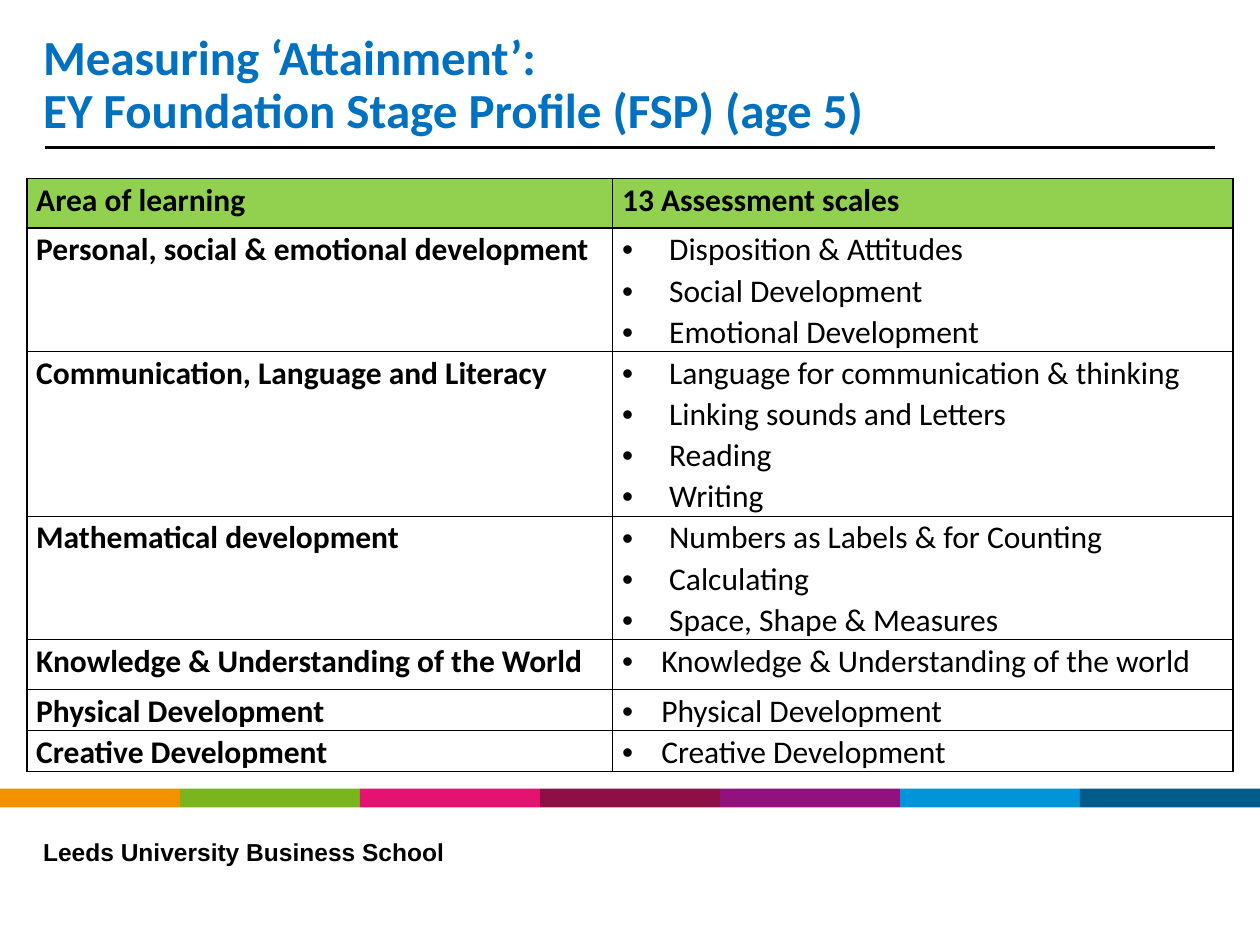
"""Build the slide on the Early Years Foundation Stage Profile scales."""
from dataclasses import dataclass
from typing import Any

from lxml.etree import SubElement
from pptx import Presentation
from pptx.dml.color import RGBColor
from pptx.enum.shapes import MSO_CONNECTOR, MSO_SHAPE
from pptx.enum.text import MSO_ANCHOR, MSO_AUTO_SIZE, PP_ALIGN
from pptx.oxml.ns import qn
from pptx.util import Cm, Pt

STRAIGHT = MSO_CONNECTOR.STRAIGHT
RECTANGLE = MSO_SHAPE.RECTANGLE
BOTTOM, TOP = MSO_ANCHOR.BOTTOM, MSO_ANCHOR.TOP
NO_FIT = MSO_AUTO_SIZE.NONE
LEFT = PP_ALIGN.LEFT
TITLE_ONLY = 5


@dataclass(frozen=True)
class Theme:
    """Hold the colours, fonts and type sizes of the deck."""

    title: str = "0070C0"
    ink: str = "000000"
    header: str = "92D050"
    stripes: tuple[str, ...] = (
        "F39100", "7AB51D", "E41270", "8E0E46", "93117E", "0095D8", "005C88")
    body_font: str = "Calibri"
    footer_font: str = "Arial"
    title_size: int = 28
    body_size: int = 18
    footer_size: int = 14


@dataclass(frozen=True)
class TextStyle:
    """Describe how a paragraph looks."""

    font: str
    size: int
    color: str
    spacing: float
    bold: bool = True


@dataclass(frozen=True)
class Area:
    """Describe one area of learning and its assessment scales."""

    name: str
    scales: tuple[str, ...]
    height: float
    indent: float = 0.95


THEME = Theme()
TITLE_STYLE = TextStyle(THEME.body_font, THEME.title_size, THEME.title, 0.9)
FOOTER_STYLE = TextStyle(THEME.footer_font, THEME.footer_size, THEME.ink, 0.8)
LABEL_STYLE = TextStyle(THEME.body_font, THEME.body_size, THEME.ink, 1.07)
SCALE_STYLE = TextStyle(THEME.body_font, THEME.body_size, THEME.ink, 1.07, False)

HEADINGS = ("Area of learning", "13 Assessment scales")
HEADER_HEIGHT = 1.0
COLUMN_WIDTHS = (11.81, 12.51)
AREAS = (
    Area("Personal, social & emotional development",
         ("Disposition & Attitudes", "Social Development", "Emotional Development"), 2.48),
    Area("Communication, Language and Literacy",
         ("Language for communication & thinking", "Linking sounds and Letters",
          "Reading", "Writing"), 3.32),
    Area("Mathematical development",
         ("Numbers as Labels & for Counting", "Calculating", "Space, Shape & Measures"), 2.48),
    Area("Knowledge & Understanding of the World",
         ("Knowledge & Understanding of the world",), 1.0, 0.79),
    Area("Physical Development", ("Physical Development",), 0.83, 0.79),
    Area("Creative Development", ("Creative Development",), 0.83, 0.79),
)


def apply(target: Any, values: dict[str, Any]) -> None:
    """Set each named attribute on the target."""
    for name, value in values.items():
        setattr(target, name, value)


def write(para: Any, text: str, style: TextStyle) -> None:
    """Put styled text in a paragraph."""
    para.text = text
    apply(para, {"alignment": LEFT, "line_spacing": style.spacing,
                 "space_before": Pt(0), "space_after": Pt(0)})
    for span in para.runs:
        apply(span.font, {"name": style.font, "size": Pt(style.size), "bold": style.bold})
        span.font.color.rgb = RGBColor.from_string(style.color)


def add_bullet(para: Any, indent: float) -> None:
    """Give a paragraph a round bullet with a hanging indent."""
    properties = para._p.get_or_add_pPr()
    properties.set("marL", str(Cm(indent)))
    properties.set("indent", str(-Cm(indent)))
    SubElement(properties, qn("a:buFont"), typeface="Arial")
    SubElement(properties, qn("a:buChar"), char="•")


def fill_frame(box: Any, text: str, style: TextStyle, anchor: Any) -> None:
    """Write one paragraph in a box without margins."""
    frame = box.text_frame
    apply(frame, {"margin_left": 0, "margin_right": 0, "margin_top": 0, "margin_bottom": 0,
                  "word_wrap": True, "auto_size": NO_FIT, "vertical_anchor": anchor})
    write(frame.paragraphs[0], text, style)


def add_title(page: Any) -> None:
    """Place and write the title."""
    title = page.shapes.title
    apply(title, {"left": Cm(0.87), "top": Cm(0.61), "width": Cm(17.93), "height": Cm(2.2)})
    fill_frame(title, "Measuring ‘Attainment’:\vEY Foundation Stage Profile (FSP) (age 5)",
               TITLE_STYLE, BOTTOM)


def add_rule(page: Any) -> None:
    """Draw the line under the title."""
    rule = page.shapes.add_connector(STRAIGHT, Cm(0.9), Cm(2.97), Cm(24.5), Cm(2.97))
    rule.line.width = Pt(1.5)
    rule.line.color.rgb = RGBColor.from_string(THEME.ink)
    SubElement(rule._element.spPr, qn("a:effectLst"))


def add_stripes(page: Any, page_width: int) -> None:
    """Draw the band of equal coloured stripes."""
    count = len(THEME.stripes)
    edges = [page_width * index // count for index in range(count + 1)]
    for color, left, right in zip(THEME.stripes, edges, edges[1:]):
        stripe = page.shapes.add_shape(RECTANGLE, left, Cm(15.9), right - left, Cm(0.38))
        stripe.shadow.inherit = False
        stripe.fill.solid()
        stripe.fill.fore_color.rgb = RGBColor.from_string(color)
        stripe.line.fill.background()


def format_cell(cell: Any, fill: str | None = None) -> None:
    """Set the margins, borders and fill of a cell."""
    apply(cell, {"margin_left": Cm(0.19), "margin_right": Cm(0.19),
                 "margin_top": 0, "margin_bottom": 0, "vertical_anchor": TOP})
    properties = cell._tc.get_or_add_tcPr()
    for side in ("lnL", "lnR", "lnT", "lnB"):
        border = SubElement(properties, qn(f"a:{side}"), w=str(Pt(1)))
        SubElement(SubElement(border, qn("a:solidFill")), qn("a:srgbClr"), val=THEME.ink)
    if fill is None:
        cell.fill.background()
    else:
        cell.fill.solid()
        cell.fill.fore_color.rgb = RGBColor.from_string(fill)


def write_scales(cell: Any, area: Area) -> None:
    """List the assessment scales of an area in a cell."""
    frame = cell.text_frame
    for index, scale in enumerate(area.scales):
        para = frame.add_paragraph() if index else frame.paragraphs[0]
        add_bullet(para, area.indent)
        write(para, scale, SCALE_STYLE)


def add_scales_table(page: Any) -> None:
    """Draw the table of areas and scales."""
    heights = (HEADER_HEIGHT, *(area.height for area in AREAS))
    table = page.shapes.add_table(len(heights), len(COLUMN_WIDTHS), Cm(0.54), Cm(3.6),
                                  Cm(sum(COLUMN_WIDTHS)), Cm(sum(heights))).table
    apply(table, {"first_row": False, "horz_banding": False})
    for column, width in zip(table.columns, COLUMN_WIDTHS):
        column.width = Cm(width)
    for row, height in zip(table.rows, heights):
        row.height = Cm(height)
    for index, heading in enumerate(HEADINGS):
        cell = table.cell(0, index)
        format_cell(cell, THEME.header)
        write(cell.text_frame.paragraphs[0], heading, LABEL_STYLE)
    for index, area in enumerate(AREAS, start=1):
        label, scales = table.cell(index, 0), table.cell(index, 1)
        format_cell(label)
        format_cell(scales)
        write(label.text_frame.paragraphs[0], area.name, LABEL_STYLE)
        write_scales(scales, area)


def main() -> None:
    """Build and save the deck."""
    deck = Presentation()
    apply(deck, {"slide_width": Cm(25.4), "slide_height": Cm(19.05)})
    page = deck.slides.add_slide(deck.slide_layouts[TITLE_ONLY])
    add_rule(page)
    footer = page.shapes.add_textbox(Cm(0.87), Cm(16.99), Cm(9.42), Cm(0.48))
    fill_frame(footer, "Leeds University Business School", FOOTER_STYLE, TOP)
    add_stripes(page, deck.slide_width)
    add_title(page)
    add_scales_table(page)
    deck.save("out.pptx")


if __name__ == "__main__":
    main()
